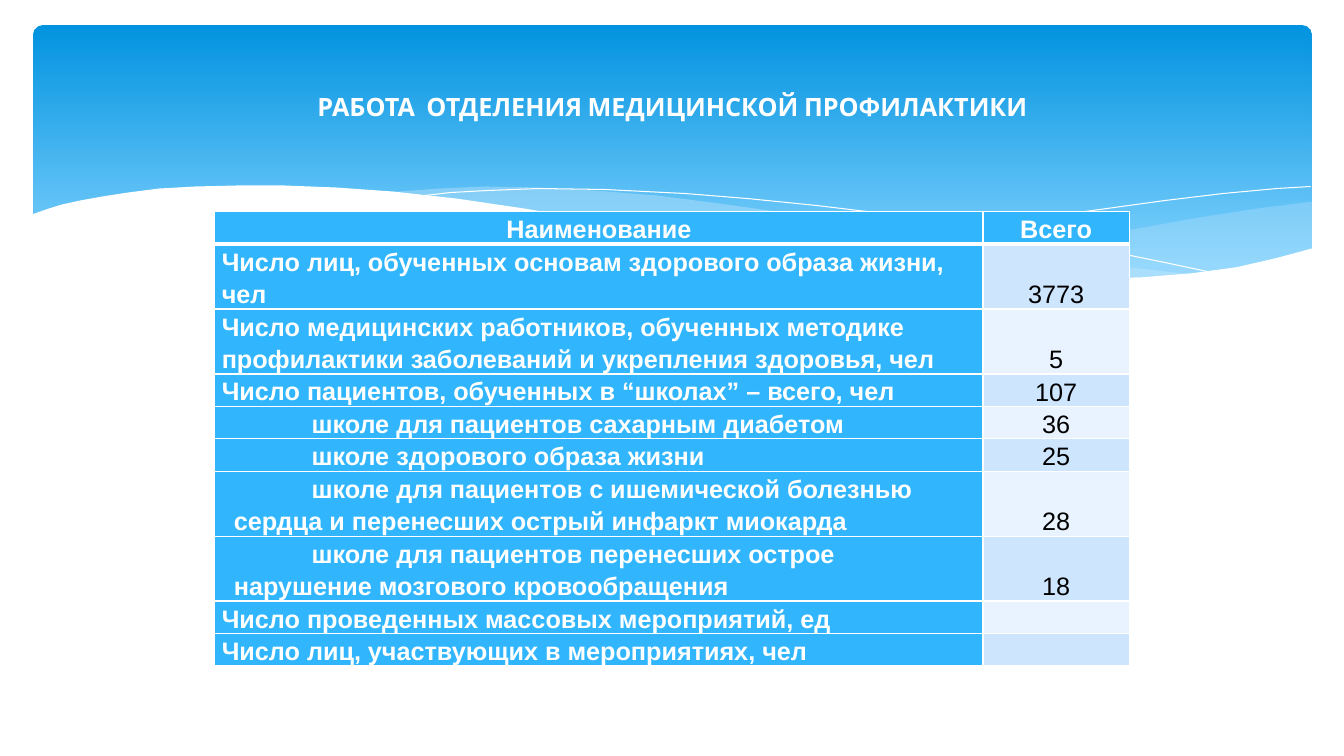
from lxml import etree
from pptx import Presentation
from pptx.dml.color import RGBColor
from pptx.enum.shapes import MSO_SHAPE as SHAPE
from pptx.enum.text import MSO_ANCHOR as ANCHOR, PP_ALIGN as ALIGN
from pptx.oxml.ns import qn
from pptx.util import Inches, Pt

COLORS = {"white": "FFFFFF", "black": "000000", "sky_top": "0293E0",
          "sky_bottom": "83D3FE", "mist": "C6E7FC", "label": "31B6FD",
          "odd": "CEE5FE", "even": "E8F3FF"}

# Outlines of the header waves, in inches from the corner of the header
RIGHT_WAVE = [(13.01, 2), (12.46, 2.07), (11.88, 2.16), (11.1, 2.3), (10.38, 2.42),
              (9.72, 2.53), (8.82, 2.65), (9.4, 2.71), (9.93, 2.75), (10.71, 2.78),
              (11.38, 2.76), (11.96, 2.7), (12.47, 2.62), (13.01, 2.47)]
MIDDLE_WAVE = [(11.9, 2.73), (11.16, 2.65), (10.34, 2.54), (9.41, 2.4), (8.39, 2.22),
               (7.78, 2.11), (7.21, 2.03), (6.52, 1.94), (5.89, 1.89), (5.32, 1.86),
               (4.82, 1.85), (4.37, 1.87), (3.82, 1.91), (4.56, 1.99), (5.39, 2.11),
               (5.99, 2.22), (7.06, 2.4), (8.02, 2.55), (8.87, 2.66), (9.63, 2.74),
               (10.3, 2.77), (10.9, 2.78), (11.43, 2.77)]
FALLING_LINE = [(4.12, 1.95), (4.47, 1.91), (4.84, 1.89), (5.35, 1.87), (6, 1.88),
                (6.8, 1.92), (7.42, 1.97), (8.11, 2.04), (8.86, 2.13), (9.7, 2.26),
                (10.6, 2.41), (11.58, 2.61), (12.1, 2.72)]
RISING_LINE = [(8.18, 2.57), (8.7, 2.46), (9.27, 2.35), (9.97, 2.23), (10.75, 2.1),
               (11.55, 1.99), (12.13, 1.92), (12.67, 1.87), (13, 1.85)]
WHITE_WAVE = [(13.03, 2.46), (12.66, 2.56), (12.27, 2.65), (11.83, 2.71), (11.34, 2.75),
              (10.78, 2.77), (10.15, 2.75), (9.44, 2.7), (8.63, 2.62), (7.72, 2.5),
              (6.71, 2.33), (5.96, 2.2), (5.21, 2.07), (4.53, 1.97), (3.9, 1.9),
              (3.33, 1.86), (2.82, 1.84), (2.35, 1.84), (1.94, 1.85), (1.58, 1.87),
              (1.27, 1.91), (1.01, 1.95), (0.79, 1.99), (0.61, 2.03), (0.48, 2.07),
              (0.31, 2.13), (0.31, 3.29), (13.03, 3.29)]

# Label, value, lines of text, whether it is a sub-item
ROWS = [
    ("Число лиц, обученных основам здорового образа жизни, чел", "3773", 2, False),
    ("Число медицинских работников, обученных методике профилактики "
     "заболеваний и укрепления здоровья, чел", "5", 2, False),
    ("Число пациентов, обученных в “школах” – всего, чел", "107", 1, False),
    ("школе для пациентов сахарным диабетом", "36", 1, True),
    ("школе здорового образа жизни", "25", 1, True),
    ("школе для пациентов с ишемической болезнью сердца и перенесших "
     "острый инфаркт миокарда", "28", 2, True),
    ("школе для пациентов перенесших острое нарушение мозгового "
     "кровообращения", "18", 2, True),
    ("Число проведенных массовых мероприятий, ед", "", 1, False),
    ("Число лиц, участвующих в мероприятиях, чел", "", 1, False),
]
LINE_HEIGHT = 0.32


def rgb(name):
    return RGBColor.from_string(COLORS[name])


def add_wave(s, left, top, points, fill=None, alpha=100):
    """A filled wave, or a white hairline when no fill is given."""
    pts = [(Inches(left + x), Inches(top + y)) for x, y in points]
    builder = s.shapes.build_freeform(*pts[0])
    builder.add_line_segments(pts[1:], close=fill is not None)
    sp = builder.convert_to_shape()
    sp.shadow.inherit = False
    if fill is None:
        sp.fill.background()
        sp.line.color.rgb = rgb("white")
        sp.line.width = Pt(0)
        return
    sp.fill.solid()
    sp.fill.fore_color.rgb = rgb(fill)
    sp.line.fill.background()
    if alpha < 100:
        color = sp._element.spPr.find(".//" + qn("a:srgbClr"))
        etree.SubElement(color, qn("a:alpha"), val=str(alpha * 1000))


def add_header(s, left, top, width):
    # Gradient band
    band = s.shapes.add_shape(SHAPE.ROUNDED_RECTANGLE, Inches(left + 0.33),
                              Inches(top + 0.25), Inches(width - 0.65), Inches(2.7))
    band.adjustments[0] = 0.034
    band.shadow.inherit = False
    band.line.fill.background()
    band.fill.gradient()
    band.fill.gradient_angle = 270
    stops = zip(band.fill.gradient_stops, (("sky_top", 0), ("sky_bottom", 0.9)))
    for stop, (name, position) in stops:
        stop.color.rgb = rgb(name)
        stop.position = position
    # Waves, back to front
    add_wave(s, left, top, RIGHT_WAVE, "mist", 29)
    add_wave(s, left, top, MIDDLE_WAVE, "mist", 40)
    add_wave(s, left, top, FALLING_LINE)
    add_wave(s, left, top, RISING_LINE)
    add_wave(s, left, top, WHITE_WAVE, "white")


def add_title(s, left, top, width, height, text):
    box = s.shapes.add_textbox(Inches(left), Inches(top), Inches(width), Inches(height))
    tf = box.text_frame
    tf.word_wrap = True
    tf.vertical_anchor = ANCHOR.MIDDLE
    p = tf.paragraphs[0]
    p.text = text
    p.alignment = ALIGN.CENTER
    p.font.name, p.font.size, p.font.bold = "Cabin", Pt(18), True
    p.font.color.rgb = rgb("white")


def style_cell(cell, text, fill, color="white", bold=True, align=ALIGN.LEFT,
               anchor=ANCHOR.TOP, bottom=1, sub_item=False):
    cell.margin_left = cell.margin_right = Inches(0.07)
    cell.margin_top = cell.margin_bottom = 0
    cell.vertical_anchor = anchor
    # Borders come before the fill in the cell properties
    tcPr = cell._tc.get_or_add_tcPr()
    for side, width in (("L", 1), ("R", 1), ("T", 1), ("B", bottom)):
        ln = etree.SubElement(tcPr, qn("a:ln" + side), w=str(Pt(width)))
        solid = etree.SubElement(ln, qn("a:solidFill"))
        etree.SubElement(solid, qn("a:srgbClr"), val=COLORS["white"])
    cell.fill.solid()
    cell.fill.fore_color.rgb = rgb(fill)
    p = cell.text_frame.paragraphs[0]
    if text:
        p.text = text
    p.alignment = align
    p.line_spacing = 1.15
    p.font.name, p.font.size, p.font.bold = "Arial", Pt(18), bold
    p.font.color.rgb = rgb(color)
    if sub_item:
        pPr = p._p.get_or_add_pPr()
        pPr.set("marL", str(Inches(0.12)))
        pPr.set("indent", str(Inches(0.77)))


def add_results(s, left, top, widths):
    lines = [1] + [row[2] for row in ROWS]
    frame = s.shapes.add_table(len(lines), len(widths), Inches(left), Inches(top),
                               Inches(sum(widths)), Inches(LINE_HEIGHT * sum(lines)))
    table = frame.table
    table.first_row = table.horz_banding = False
    for column, width in zip(table.columns, widths):
        column.width = Inches(width)
    for row, count in zip(table.rows, lines):
        row.height = Inches(LINE_HEIGHT * count)
    # Heading row
    for col, text in enumerate(("Наименование", "Всего")):
        style_cell(table.cell(0, col), text, "label", align=ALIGN.CENTER,
                   anchor=ANCHOR.MIDDLE, bottom=3)
    # Labels and banded values
    for i, (label, value, _, sub_item) in enumerate(ROWS, 1):
        style_cell(table.cell(i, 0), label, "label", sub_item=sub_item)
        style_cell(table.cell(i, 1), value, "odd" if i % 2 else "even", "black",
                   False, ALIGN.CENTER, ANCHOR.BOTTOM)


def main():
    prs = Presentation()
    prs.slide_width, prs.slide_height = Inches(13.33), Inches(7.5)
    s = prs.slides.add_slide(prs.slide_layouts[6])
    add_header(s, 0, 0, 13.33)
    add_results(s, 2.13, 2.1, (7.62, 1.45))
    add_title(s, 0.67, 0.37, 12, 1.37, "РАБОТА  ОТДЕЛЕНИЯ МЕДИЦИНСКОЙ ПРОФИЛАКТИКИ")
    prs.save("out.pptx")


if __name__ == "__main__":
    main()
